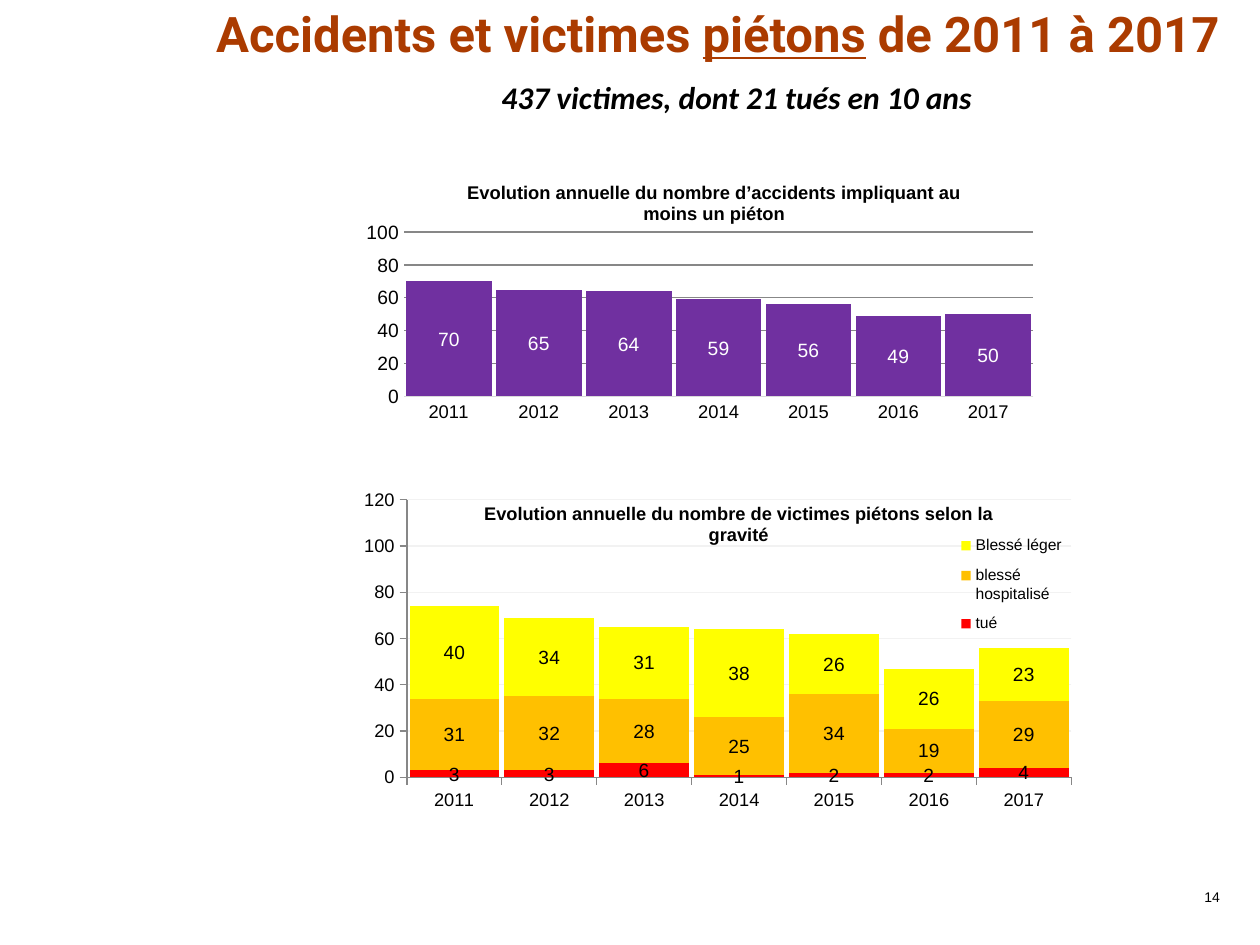
from lxml.etree import SubElement
from pptx import Presentation
from pptx.chart.data import CategoryChartData
from pptx.dml.color import RGBColor
from pptx.enum.chart import XL_CHART_TYPE, XL_LABEL_POSITION, XL_LEGEND_POSITION, XL_TICK_MARK
from pptx.enum.text import MSO_ANCHOR, PP_ALIGN
from pptx.oxml.ns import qn
from pptx.util import Cm, Pt


def color(hex_code):
    return RGBColor.from_string(hex_code)


def place(element, index, **fractions):
    """Give a chart part a manual layout, in fractions of the chart area."""
    for old_layout in element.findall(qn("c:layout")):
        element.remove(old_layout)
    layout = SubElement(element, qn("c:layout"))
    element.insert(index, layout)
    manual = SubElement(layout, qn("c:manualLayout"))
    if index == 0:
        SubElement(manual, qn("c:layoutTarget")).set("val", "inner")
    for axis in "xy":
        SubElement(manual, qn(f"c:{axis}Mode")).set("val", "edge")
    for name, fraction in fractions.items():
        SubElement(manual, qn(f"c:{name}")).set("val", str(fraction))


presentation = Presentation()
presentation.slide_width = Cm(25.4)
presentation.slide_height = Cm(19.05)
slide = presentation.slides.add_slide(presentation.slide_layouts[6])

# Headings and page number: position, inset, wrap, alignment, font, runs
texts = [
    ((3.84, 0.08, 21.26, 1.68), 0, True, PP_ALIGN.CENTER,
     ("Roboto", 28, "AB3B00", True, False),
     ["Accidents et victimes ", "piétons", " de 2011 à 2017"]),
    ((9.86, 1.45, 10.11, 1.04), 0.25, False, PP_ALIGN.LEFT,
     ("Calibri", 18, "000000", True, True),
     ["437 victimes, dont 21 tués en 10 ans"]),
    ((23.47, 17.78, 1.93, 1.27), 0.25, True, PP_ALIGN.CENTER,
     ("Arial", 8, "000000", False, False), ["14"]),
]
for position, inset, wrap, alignment, (name, size, ink, bold, italic), runs in texts:
    frame = slide.shapes.add_textbox(*map(Cm, position)).text_frame
    frame.word_wrap = wrap
    frame.vertical_anchor = MSO_ANCHOR.TOP
    frame.margin_left = frame.margin_right = Cm(inset)
    frame.margin_top = frame.margin_bottom = Cm(inset / 2)
    paragraph = frame.paragraphs[0]
    paragraph.alignment = alignment
    font = paragraph.font
    font.name, font.size, font.bold, font.italic = name, Pt(size), bold, italic
    font.color.rgb = color(ink)
    for text in runs:
        run = paragraph.add_run()
        run.text = text
        if text == "piétons":
            run.font.underline = True

# Stacked column charts
charts = [
    {
        "position": (7.34, 9.58, 14.27, 6.76),
        "title": "Evolution annuelle du nombre de victimes piétons selon la gravité",
        "title_place": {"x": 0.16, "y": 0.07},
        "plot_place": {"x": 0.055, "y": 0.074, "w": 0.945, "h": 0.836},
        "overlay": True, "legend": True, "gap": 6, "maximum": 120,
        "tick": XL_TICK_MARK.OUTSIDE, "value_size": 10.5,
        "grid": "F2F2F2", "axis_line": "878787", "label_color": "000000",
        "series": [
            ("tué", "FF0000", (3, 3, 6, 1, 2, 2, 4)),
            ("blessé hospitalisé", "FFC000", (31, 32, 28, 25, 34, 19, 29)),
            ("Blessé léger", "FFFF00", (40, 34, 31, 38, 26, 26, 23)),
        ],
    },
    {
        "position": (7.11, 3, 14, 5.61),
        "title": "Evolution annuelle du nombre d’accidents impliquant au moins un piéton",
        "title_place": {"x": 0.16, "y": 0.1},
        "plot_place": {"x": 0.074, "y": 0.27, "w": 0.906, "h": 0.62},
        "overlay": False, "legend": False, "gap": 5, "maximum": 105,
        "tick": XL_TICK_MARK.NONE, "value_size": 11,
        "grid": "878787", "axis_line": "D9D9D9", "label_color": "FFFFFF",
        "series": [("Series 1", "7030A0", (70, 65, 64, 59, 56, 49, 50))],
    },
]
for settings in charts:
    data = CategoryChartData()
    data.categories = [str(year) for year in range(2011, 2018)]
    for name, _, values in settings["series"]:
        data.add_series(name, values)
    chart = slide.shapes.add_chart(
        XL_CHART_TYPE.COLUMN_STACKED, *map(Cm, settings["position"]), data).chart
    chart.font.name, chart.font.size = "Arial", Pt(11)
    chart.font.color.rgb = color("000000")

    chart.has_title = True
    title = chart.chart_title
    title.text_frame.text = settings["title"]
    font = title.text_frame.paragraphs[0].font
    font.name, font.size, font.bold = "Arial", Pt(10.5), True
    font.color.rgb = color("000000")
    title_element = title._element
    place(title_element, 1, **settings["title_place"])
    title_element.find(qn("c:overlay")).set("val", str(int(settings["overlay"])))
    place(chart._chartSpace.chart.plotArea, 0, **settings["plot_place"])

    category_axis, value_axis = chart.category_axis, chart.value_axis
    for axis in (category_axis, value_axis):
        axis.major_tick_mark = settings["tick"]
        axis.minor_tick_mark = XL_TICK_MARK.NONE
        axis.format.line.color.rgb = color(settings["axis_line"])
        axis.format.line.width = Pt(0.75)
    category_axis.tick_labels.font.size = Pt(10.5)
    value_axis.tick_labels.font.size = Pt(settings["value_size"])
    value_axis.minimum_scale = 0
    value_axis.maximum_scale = settings["maximum"]
    value_axis.major_unit = 20
    value_axis.has_major_gridlines = True
    grid_line = value_axis.major_gridlines.format.line
    grid_line.color.rgb = color(settings["grid"])
    grid_line.width = Pt(0.75)
    if settings["tick"] == XL_TICK_MARK.NONE:
        value_axis.format.line.fill.background()

    plot = chart.plots[0]
    plot.gap_width, plot.overlap = settings["gap"], 100
    plot.vary_by_categories = False
    for series, (_, fill, _) in zip(plot.series, settings["series"]):
        series.format.fill.solid()
        series.format.fill.fore_color.rgb = color(fill)
        labels = series.data_labels
        labels.show_value = True
        labels.position = XL_LABEL_POSITION.CENTER
        labels.font.size = Pt(11)
        labels.font.color.rgb = color(settings["label_color"])

    chart.has_legend = settings["legend"]
    if chart.has_legend:
        legend = chart.legend
        legend.position = XL_LEGEND_POSITION.RIGHT
        legend.include_in_layout = False
        legend.font.size = Pt(9)
        place(legend._element, 1, x=0.83, y=0.15, w=0.17, h=0.36)

presentation.save("out.pptx")
